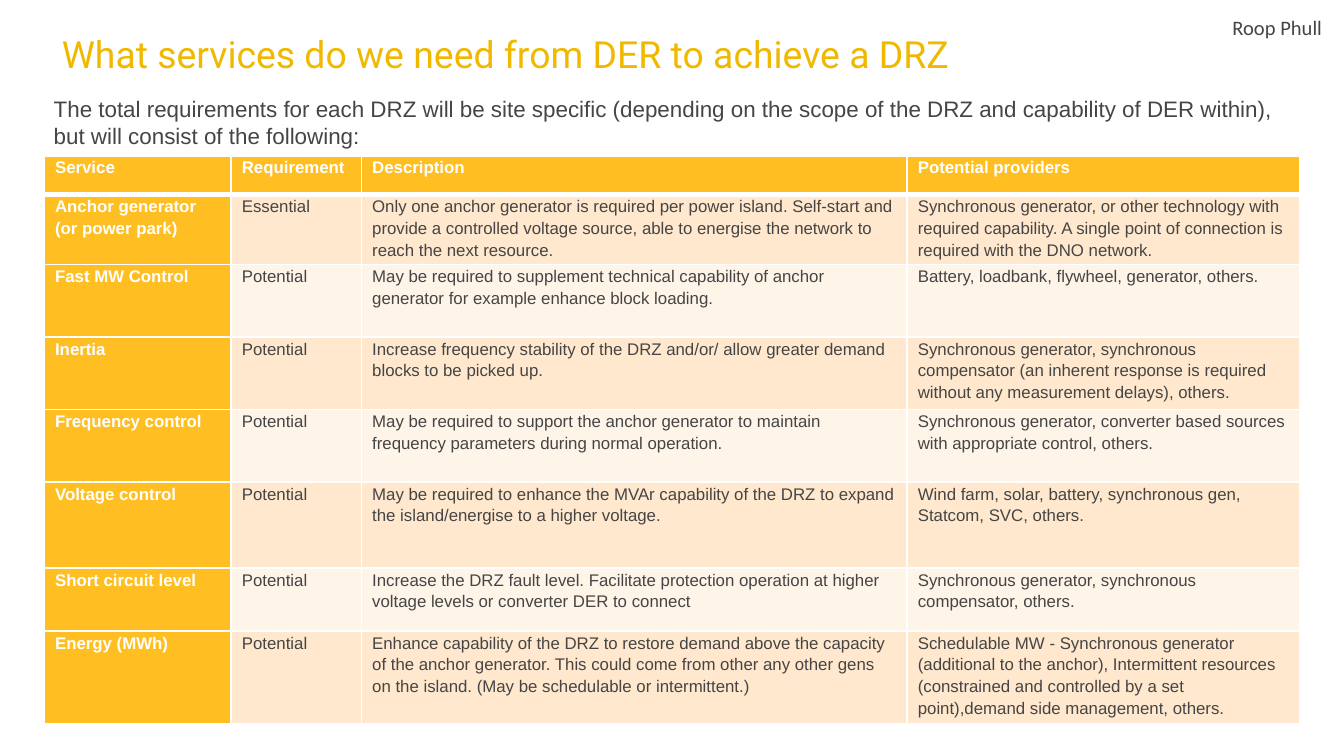
from lxml.etree import SubElement
from pptx import Presentation
from pptx.dml.color import RGBColor
from pptx.oxml.ns import qn
from pptx.util import Inches, Pt

# Widescreen slide, 16 by 9
WIDTH = 10
HEIGHT = WIDTH * 9 / 16
AMBER, GOLD, GREY, WHITE = "FFBF22", "F0B900", "454545", "FFFFFF"
BANDS = ["FFE8CD", "FFF4E8"]

# Column widths and row heights, in hundredths of an inch
COLUMNS = [139, 97, 406, 292]
ROWS = [29, 50, 54, 54, 54, 64, 47, 68]

SERVICES = [
    ("Service", "Requirement", "Description", "Potential providers"),
    ("Anchor generator\n(or power park)", "Essential",
     "Only one anchor generator is required per power island. Self-start and provide a "
     "controlled voltage source, able to energise the network to reach the next resource.",
     "Synchronous generator, or other technology with required capability. "
     "A single point of connection is required with the DNO network."),
    ("Fast MW Control", "Potential",
     "May be required to supplement technical capability of anchor generator "
     "for example enhance block loading.",
     "Battery, loadbank, flywheel, generator, others."),
    ("Inertia", "Potential",
     "Increase frequency stability of the DRZ and/or/ allow greater demand blocks "
     "to be picked up.",
     "Synchronous generator, synchronous compensator (an inherent response is required "
     "without any measurement delays), others."),
    ("Frequency control", "Potential",
     "May be required to support the anchor generator to maintain frequency parameters "
     "during normal operation.",
     "Synchronous generator, converter based sources with appropriate control, others."),
    ("Voltage control", "Potential",
     "May be required to enhance the MVAr capability of the DRZ to expand the "
     "island/energise to a higher voltage.",
     "Wind farm, solar, battery, synchronous gen, Statcom, SVC, others."),
    ("Short circuit level", "Potential",
     "Increase the DRZ fault level. Facilitate protection operation at higher voltage "
     "levels or converter DER to connect",
     "Synchronous generator, synchronous compensator, others."),
    ("Energy (MWh)", "Potential",
     "Enhance capability of the DRZ to restore demand above the capacity of the anchor "
     "generator. This could come from other any other gens on the island. "
     "(May be schedulable or intermittent.)",
     "Schedulable MW - Synchronous generator (additional to the anchor), Intermittent "
     "resources (constrained and controlled by a set point),demand side management, others."),
]


def color(value):
    return RGBColor.from_string(value)


def style_paragraph(paragraph, name, size, value, bold=False, spacing=1.0):
    paragraph.line_spacing = spacing
    paragraph.font.name = name
    paragraph.font.size = Pt(size)
    paragraph.font.bold = bold
    paragraph.font.color.rgb = color(value)


def add_text(slide, box, text, name, size, value, insets=(0, 0, 0, 0), spacing=1.0, wrap=True):
    shape = slide.shapes.add_textbox(*map(Inches, box))
    frame = shape.text_frame
    frame.word_wrap = wrap
    (frame.margin_left, frame.margin_top,
     frame.margin_right, frame.margin_bottom) = map(Inches, insets)
    frame.text = text
    style_paragraph(frame.paragraphs[0], name, size, value, spacing=spacing)


def add_borders(cell, bottom_width):
    properties = cell._tc.get_or_add_tcPr()
    for side, width in (("L", 1), ("R", 1), ("T", 1), ("B", bottom_width)):
        line = SubElement(properties, qn(f"a:ln{side}"), w=str(Pt(width)))
        fill = SubElement(line, qn("a:solidFill"))
        SubElement(fill, qn("a:srgbClr"), val=WHITE)


def fill_cell(cell, text, row, column):
    is_heading = row == 0 or column == 0
    add_borders(cell, 3 if row == 0 else 1)
    cell.fill.solid()
    cell.fill.fore_color.rgb = color(AMBER if is_heading else BANDS[(row - 1) % 2])
    cell.margin_left = cell.margin_right = Inches(0.08)
    cell.margin_top = cell.margin_bottom = 0
    cell.text = text
    for paragraph in cell.text_frame.paragraphs:
        style_paragraph(paragraph, "Arial", 9, WHITE if is_heading else GREY,
                        bold=is_heading, spacing=1.15)


def add_services_table(slide, box):
    width, height = box[2:]
    frame = slide.shapes.add_table(len(ROWS), len(COLUMNS), *map(Inches, box))
    table = frame.table
    for column, share in zip(table.columns, COLUMNS):
        column.width = Inches(width * share / sum(COLUMNS))
    for row, share in zip(table.rows, ROWS):
        row.height = Inches(height * share / sum(ROWS))
    for row, texts in enumerate(SERVICES):
        for column, text in enumerate(texts):
            fill_cell(table.cell(row, column), text, row, column)


def add_header(slide, box):
    left, top, width = box[:3]
    # Introduction
    add_text(slide, (left - 0.07, top + 0.66, 9.74, 0.66),
             "The total requirements for each DRZ will be site specific (depending on the scope "
             "of the DRZ and capability of DER within), but will consist of the following:",
             "Arial", 12, GREY, insets=(0.47, 0.05, 0.1, 0.05))
    # Title
    add_text(slide, (left + 0.46, top + 0.27, 8.12, 0.29),
             "What services do we need from DER to achieve a DRZ",
             "Roboto", 20, GOLD, spacing=0.9)
    # Speaker
    add_text(slide, (left + width - 0.83, top + 0.11, 0.77, 0.19),
             "Roop Phull", "Calibri", 11, GREY, wrap=False)


def main():
    presentation = Presentation()
    presentation.slide_width = Inches(WIDTH)
    presentation.slide_height = Inches(HEIGHT)
    slide = presentation.slides.add_slide(presentation.slide_layouts[6])
    add_header(slide, (0, 0, WIDTH, 1.15))
    add_services_table(slide, (0.33, 1.16, 9.34, 4.2))
    presentation.save("out.pptx")


if __name__ == "__main__":
    main()
